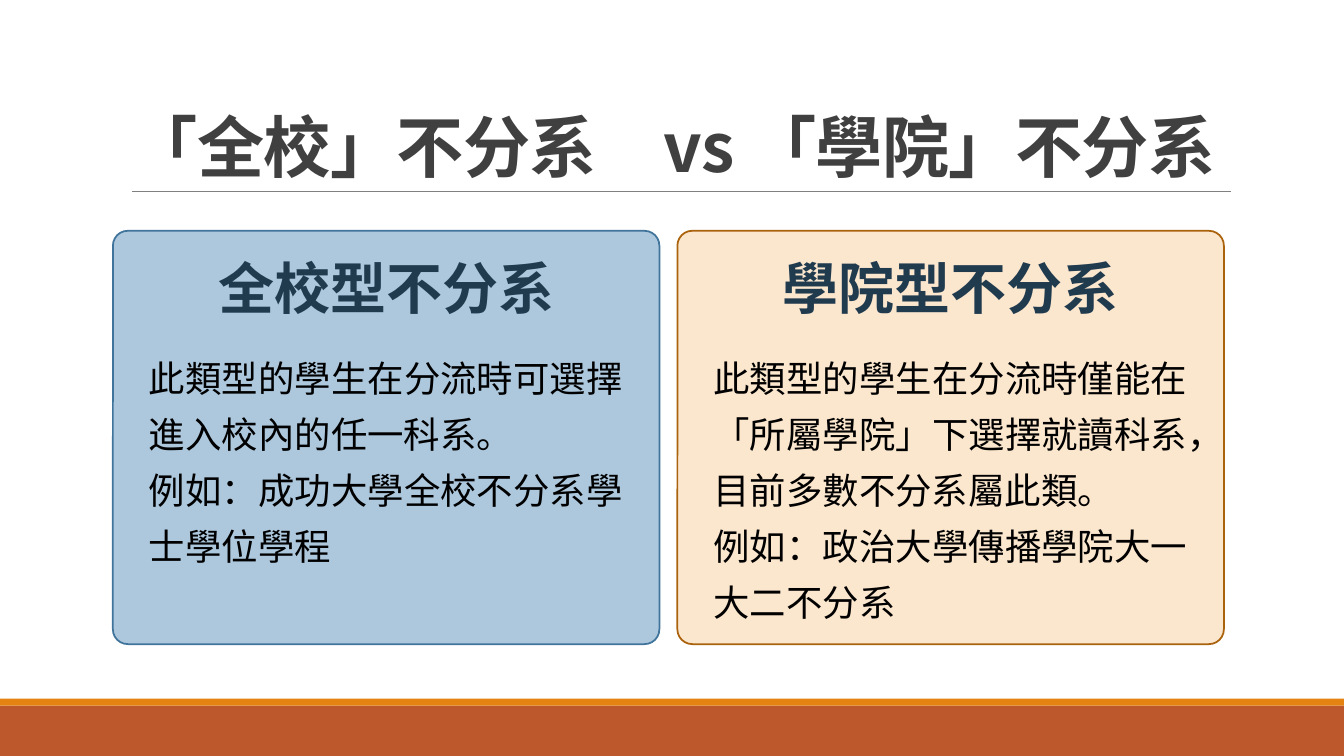
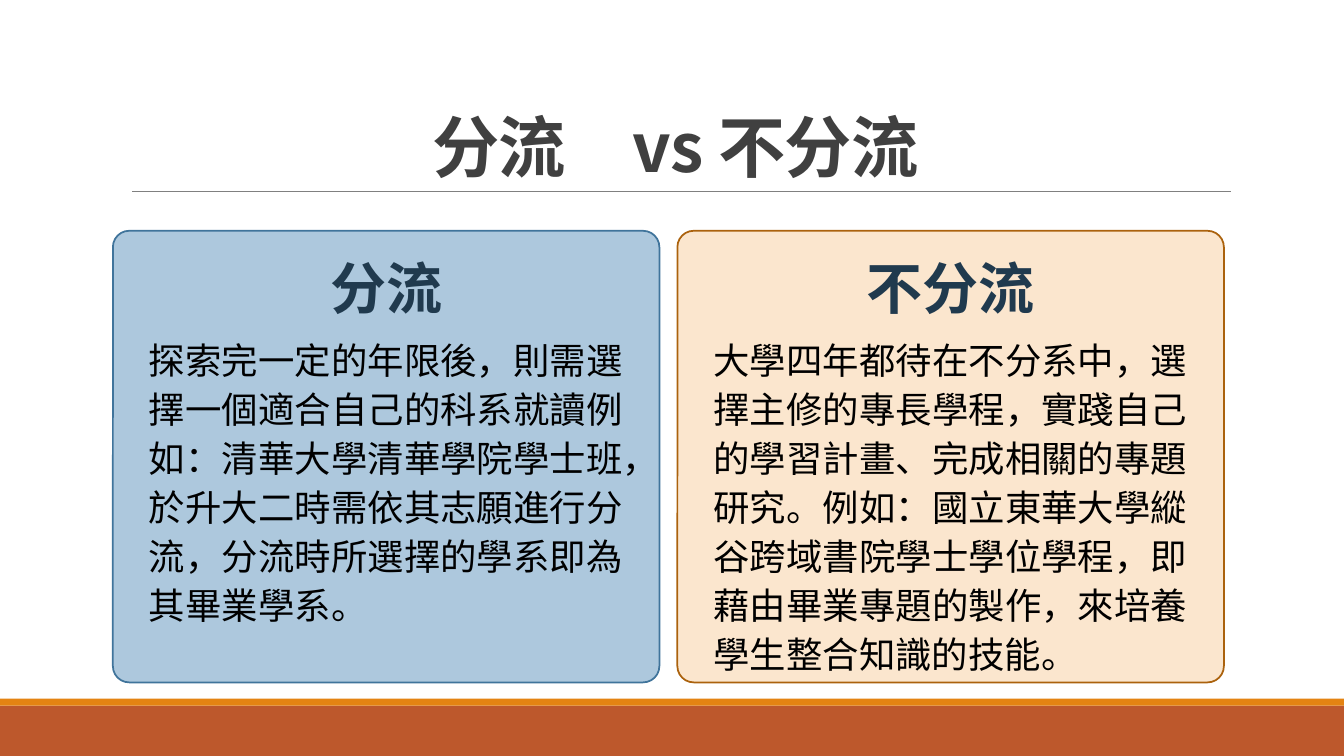
import dataclasses

import lxml.etree
import pptx
import pptx.dml.color
import pptx.enum.shapes
import pptx.enum.text
import pptx.oxml.ns
import pptx.util

ALIGN = pptx.enum.text.PP_ALIGN
ANCHOR = pptx.enum.text.MSO_ANCHOR
SHAPE = pptx.enum.shapes.MSO_SHAPE
qn = pptx.oxml.ns.qn


@dataclasses.dataclass(frozen=True)
class Theme:
    face: str = "Noto Sans CJK JP"
    band: str = "BD582C"
    trim: str = "E48312"
    rule: str = "808080"
    title: str = "404040"
    head: str = "203A4E"
    body: str = "000000"
    cards: tuple = (("ADC8DD", "40749B"), ("FBE6CE", "AB620D"))
    big: int = 48
    mid: int = 40
    small: int = 26


def tint(code):
    return pptx.dml.color.RGBColor.from_string(code)


class Deck:
    def __init__(self, theme):
        self.theme = theme
        self.show = pptx.Presentation()
        self.show.slide_width = pptx.util.Inches(13.33)
        self.show.slide_height = pptx.util.Inches(7.5)
        self.page = None

    def across(self, share):
        return round(self.show.slide_width * share / 100)

    def down(self, share):
        return round(self.show.slide_height * share / 100)

    def area(self, left, top, width, height):
        return self.across(left), self.down(top), self.across(width), self.down(height)

    def start(self):
        self.page = self.show.slides.add_slide(self.show.slide_layouts[6])
        self.block((0, 93.33, 100, 6.67), self.theme.band)
        self.block((0, 92.4, 100, 0.93), self.theme.trim)
        self.rule(9.83, 91.6, 25.33)

    def block(self, area, fill, edge=None, kind=SHAPE.RECTANGLE):
        shape = self.page.shapes.add_shape(kind, *self.area(*area))
        shape.shadow.inherit = False
        shape.fill.solid()
        shape.fill.fore_color.rgb = tint(fill)
        if edge:
            shape.line.color.rgb = tint(edge)
            shape.line.width = pptx.util.Pt(1.25)
        else:
            shape.line.fill.background()
        return shape

    def rule(self, left, right, top):
        line = self.page.shapes.add_connector(
            pptx.enum.shapes.MSO_CONNECTOR.STRAIGHT,
            self.across(left), self.down(top), self.across(right), self.down(top))
        line.line.color.rgb = tint(self.theme.rule)
        line.line.width = pptx.util.Pt(0.5)
        lxml.etree.SubElement(line._element.spPr, qn("a:effectLst"))

    def text(self, area, lines, size, color, align, bold=False,
             lead=None, anchor=ANCHOR.TOP, track=None):
        frame = self.page.shapes.add_textbox(*self.area(*area)).text_frame
        frame.word_wrap = True
        frame.vertical_anchor = anchor
        frame.text = "\n".join(lines)
        for para in frame.paragraphs:
            para.alignment = align
            para.line_spacing = lead
            font = para.font
            font.name = self.theme.face
            font.size = pptx.util.Pt(size)
            font.bold = bold
            font.color.rgb = tint(color)
            props = para._p.pPr.find(qn("a:defRPr"))
            lxml.etree.SubElement(props, qn("a:ea"), typeface=self.theme.face)
            if track:
                props.set("spc", str(track))

    def title(self, words, align):
        self.text((9, 4.13, 82.52, 21.2), [words], self.theme.big, self.theme.title,
                  align, bold=True, lead=0.85, anchor=ANCHOR.BOTTOM, track=-50)

    def card(self, spot, height, top, lead, head, lines):
        left, roof, width, inset = 8.4 + 42 * spot, 30.53, 40.66, 1.95
        fill, edge = self.theme.cards[spot]
        panel = self.block((left, roof, width, height), fill, edge,
                           SHAPE.ROUNDED_RECTANGLE)
        panel.adjustments[0] = 0.036
        self.text((left, 32.93, width, 10.27), [head], self.theme.mid,
                  self.theme.head, ALIGN.CENTER, bold=True)
        self.text((left + inset, top, width - 2 * inset, roof + height - top), lines,
                  self.theme.small, self.theme.body, ALIGN.JUSTIFY,
                  lead=pptx.util.Pt(lead))

    def pair(self, title, align, height, top, lead, cards):
        self.start()
        self.title(title, align)
        for spot, (head, lines) in enumerate(cards):
            self.card(spot, height, top, lead, head, lines)


def main():
    deck = Deck(Theme())
    deck.pair("「全校」不分系　vs 「學院」不分系", ALIGN.LEFT, 54.67, 44.8, 40, [
        ("全校型不分系", [
            "此類型的學生在分流時可選擇進入校內的任一科系。",
            "例如：成功大學全校不分系學士學位學程"]),
        ("學院型不分系", [
            "此類型的學生在分流時僅能在「所屬學院」下選擇就讀科系，目前多數不分系屬此類。",
            "例如：政治大學傳播學院大一大二不分系"]),
    ])
    deck.pair("分流　vs 不分流", ALIGN.CENTER, 59.73, 43.33, 35, [
        ("分流", [
            "探索完一定的年限後，則需選擇一個適合自己的科系就讀例如：清華大學清華學院學士班，"
            "於升大二時需依其志願進行分流，分流時所選擇的學系即為其畢業學系。"]),
        ("不分流", [
            "大學四年都待在不分系中，選擇主修的專長學程，實踐自己的學習計畫、完成相關的專題研究。"
            "例如：國立東華大學縱谷跨域書院學士學位學程，即藉由畢業專題的製作，"
            "來培養學生整合知識的技能。"]),
    ])
    deck.show.save("out.pptx")


if __name__ == "__main__":
    main()
